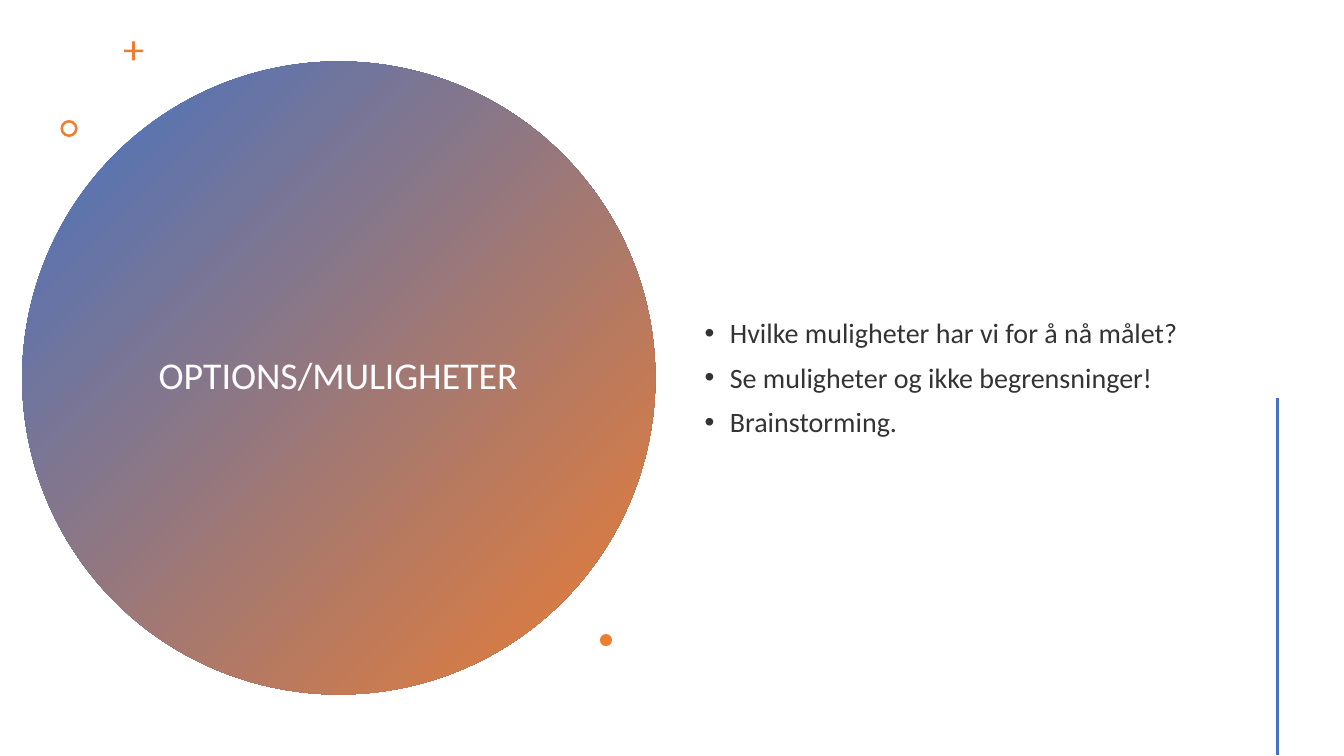
from dataclasses import dataclass

from pptx import Presentation
from pptx.dml.color import RGBColor
from pptx.enum.shapes import MSO_CONNECTOR, MSO_SHAPE as Preset
from pptx.enum.text import MSO_ANCHOR as Anchor, PP_ALIGN as Align
from pptx.oxml.ns import qn
from pptx.shapes.autoshape import Shape
from pptx.slide import Slide
from pptx.text.text import TextFrame, _Paragraph as Paragraph
from pptx.util import Inches, Pt
from lxml.etree import SubElement

BLUE, ORANGE, WHITE, BLACK = "4472C4", "ED7D31", "FFFFFF", "000000"
FONT = "Calibri"
INDENT = Inches(0.25)
OPTIONS = [
    "Hvilke muligheter har vi for å nå målet?",
    "Se muligheter og ikke begrensninger!",
    "Brainstorming.",
]


@dataclass(frozen=True)
class Accent:
    preset: Preset
    left: float
    top: float
    size: float
    adjustment: float | None = None


ACCENTS = [
    Accent(Preset.CROSS, 1.23, 0.41, 0.19, 0.43),
    Accent(Preset.DONUT, 0.6, 1.19, 0.17, 0.15),
    Accent(Preset.OVAL, 5.95, 6.29, 0.12),
]


def rgb(color: str) -> RGBColor:
    return RGBColor.from_string(color)


def add_plain_shape(slide: Slide, preset: Preset, left: float, top: float, size: float) -> Shape:
    """Add a square-framed shape without line or shadow."""
    shape = slide.shapes.add_shape(
        preset, Inches(left), Inches(top), Inches(size), Inches(size))
    shape.shadow.inherit = False
    shape.line.fill.background()
    return shape


def add_circle(slide: Slide) -> None:
    circle = add_plain_shape(slide, Preset.OVAL, 0.22, 0.61, 6.28)
    circle.fill.gradient()
    circle.fill.gradient_angle = 315
    for stop, color, position in zip(circle.fill.gradient_stops, (BLUE, ORANGE), (0, 1)):
        stop.color.rgb = rgb(color)
        stop.position = position


def add_accent(slide: Slide, accent: Accent) -> None:
    shape = add_plain_shape(slide, accent.preset, accent.left, accent.top, accent.size)
    shape.fill.solid()
    shape.fill.fore_color.rgb = rgb(ORANGE)
    if accent.adjustment is not None:
        shape.adjustments[0] = accent.adjustment


def add_text_area(slide: Slide, left: float, top: float, width: float, height: float) -> TextFrame:
    box = slide.shapes.add_textbox(
        Inches(left), Inches(top), Inches(width), Inches(height))
    frame = box.text_frame
    frame.word_wrap = True
    frame.vertical_anchor = Anchor.MIDDLE
    return frame


def style_paragraph(paragraph: Paragraph, size: float, color: str) -> None:
    paragraph.line_spacing = 0.9
    paragraph.font.name = FONT
    paragraph.font.size = Pt(size)
    paragraph.font.color.rgb = rgb(color)


def add_title(slide: Slide) -> None:
    title = add_text_area(slide, 1.36, 1.41, 3.99, 4.67).paragraphs[0]
    title.text = "OPTIONS/MULIGHETER"
    title.alignment = Align.CENTER
    style_paragraph(title, 27, WHITE)


def add_options(slide: Slide) -> None:
    frame = add_text_area(slide, 6.89, 0.57, 5.22, 6.38)
    frame.text = "\n".join(OPTIONS)
    for option in frame.paragraphs:
        style_paragraph(option, 20, BLACK)
        option.space_before = Pt(10)
        properties = option._p.get_or_add_pPr()
        properties.set("marL", str(INDENT))
        properties.set("indent", str(-INDENT))
        for text_color in properties.iter(qn("a:srgbClr")):
            SubElement(text_color, qn("a:alpha"), val="80000")
        font_properties = properties.find(qn("a:defRPr"))
        bullet_font = properties.makeelement(qn("a:buFont"), {"typeface": "Arial"})
        bullet = properties.makeelement(qn("a:buChar"), {"char": "•"})
        font_properties.addprevious(bullet_font)
        font_properties.addprevious(bullet)


def add_side_line(slide: Slide) -> None:
    x = Inches(12.67)
    side_line = slide.shapes.add_connector(
        MSO_CONNECTOR.STRAIGHT, x, Inches(3.95), x, Inches(7.49))
    side_line.line.color.rgb = rgb(BLUE)
    side_line.line.width = Pt(2)
    SubElement(side_line._element.spPr, qn("a:effectLst"))


def main() -> None:
    deck = Presentation()
    deck.slide_width, deck.slide_height = Inches(13.33), Inches(7.5)
    slide = deck.slides.add_slide(deck.slide_layouts[6])
    add_circle(slide)
    add_title(slide)
    for accent in ACCENTS:
        add_accent(slide, accent)
    add_options(slide)
    add_side_line(slide)
    deck.save("out.pptx")


if __name__ == "__main__":
    main()
